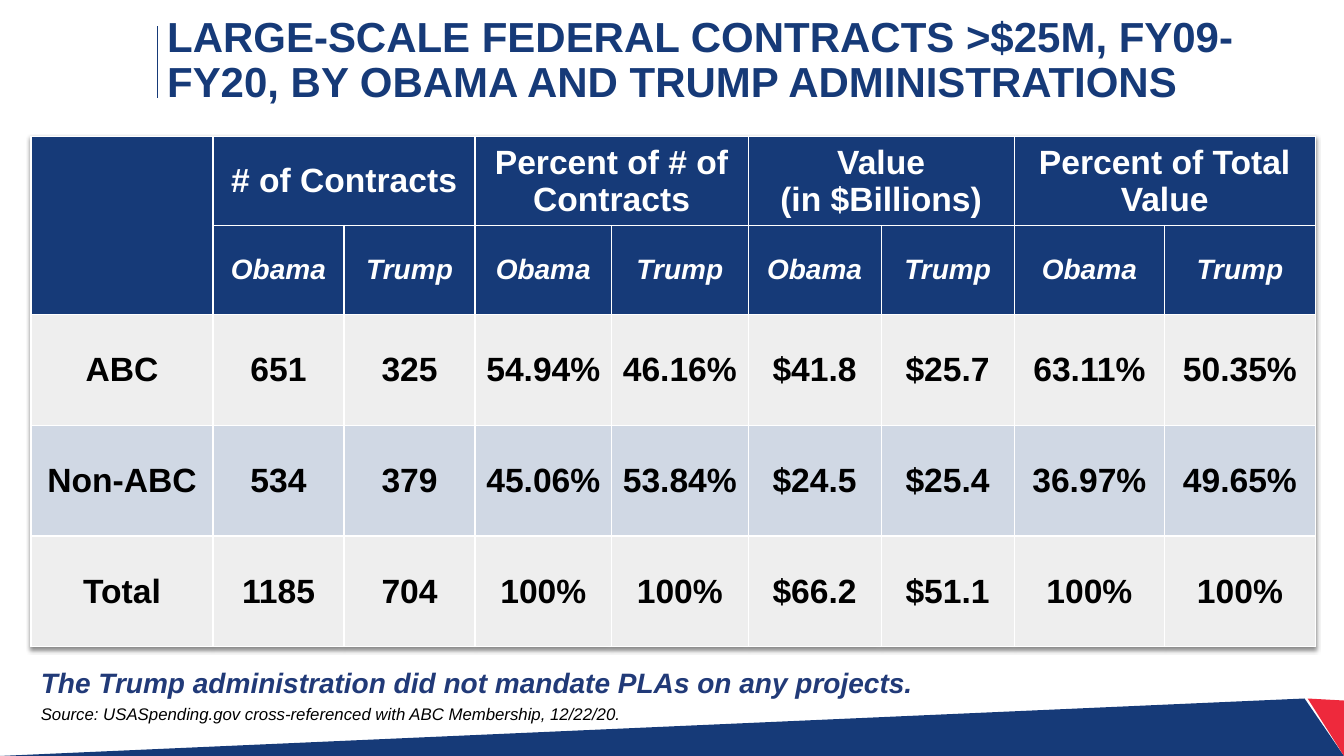
"""Build a slide comparing large-scale federal contracts under two administrations."""
from dataclasses import dataclass
from lxml.etree import SubElement
from pptx import Presentation
from pptx.dml.color import RGBColor
from pptx.enum.shapes import MSO_CONNECTOR
from pptx.enum.text import MSO_ANCHOR, PP_ALIGN
from pptx.oxml import parse_xml
from pptx.oxml.ns import nsdecls, qn
from pptx.slide import Slide
from pptx.table import _Cell
from pptx.text.text import TextFrame
from pptx.util import Emu, Inches, Pt

COLORS = {
    "navy": "163A78", "note": "213A78", "red": "EE293C", "white": "FFFFFF",
    "black": "000000", "gray": "EEEEEE", "mist": "D0D8E4",
}
SLIDE_WIDTH, SLIDE_HEIGHT = Inches(13.33), Inches(7.5)
COLUMN_SHARES = [13.55] + [9.75] * 2 + [10.16] * 2 + [9.9] * 2 + [11.2] * 2
ROW_SHARES = [11.8] * 2 + [14.63] * 3
MEASURES = ["# of Contracts", "Percent of # of Contracts",
            "Value\n(in $Billions)", "Percent of Total Value"]
ADMINISTRATIONS = ["Obama", "Trump"]
RESULTS = [
    ["ABC", "651", "325", "54.94%", "46.16%", "$41.8", "$25.7", "63.11%", "50.35%"],
    ["Non-ABC", "534", "379", "45.06%", "53.84%", "$24.5", "$25.4", "36.97%", "49.65%"],
    ["Total", "1185", "704", "100%", "100%", "$66.2", "$51.1", "100%", "100%"],
]


@dataclass(frozen=True)
class Style:
    """Size and look of a text."""
    size: int
    color: str
    bold: bool = True
    italic: bool = False


@dataclass(frozen=True)
class Caption:
    """A free text, placed in percent of the slide."""
    text: str
    left: float
    top: float
    width: float
    height: float
    style: Style
    anchor: MSO_ANCHOR = MSO_ANCHOR.TOP
    spacing: float = 1.0


@dataclass(frozen=True)
class Wedge:
    """A filled outline with corners in percent of the slide."""
    corners: tuple[tuple[float, float], ...]
    color: str


WEDGES = [
    Wedge(((0, 100), (97.07, 92.4), (100, 100)), "navy"),
    Wedge(((97.3, 92.4), (100, 92.67), (100, 100)), "red"),
]
TITLE = Caption(
    "LARGE-SCALE FEDERAL CONTRACTS >$25M, FY09-FY20, BY OBAMA AND TRUMP ADMINISTRATIONS",
    11.7, 3.6, 87.25, 9.07, Style(30, "navy"), MSO_ANCHOR.MIDDLE, 0.9)
FOOTNOTES = [
    Caption("Source: USASpending.gov cross-referenced with ABC Membership, 12/22/20.",
            2.3, 92.4, 57.5, 4, Style(12, "black", bold=False, italic=True)),
    Caption("The Trump administration did not mandate PLAs on any projects.",
            2.3, 87.33, 93.3, 5.87, Style(20, "note", italic=True)),
]
MEASURE_STYLE = Style(24, "white")
ADMINISTRATION_STYLE = Style(20, "white", italic=True)
RESULT_STYLE = Style(24, "black")


def across(percent: float) -> Emu:
    """Turn a share of the slide's width into a length."""
    return Emu(round(SLIDE_WIDTH * percent / 100))


def down(percent: float) -> Emu:
    """Turn a share of the slide's height into a length."""
    return Emu(round(SLIDE_HEIGHT * percent / 100))


def rgb(color: str) -> RGBColor:
    """Look up a named color."""
    return RGBColor.from_string(COLORS[color])


def write(frame: TextFrame, text: str, style: Style,
          align: PP_ALIGN = PP_ALIGN.LEFT, spacing: float = 1.0) -> None:
    """Fill a frame with text in one style."""
    frame.text = text
    for paragraph in frame.paragraphs:
        paragraph.alignment = align
        paragraph.line_spacing = spacing
        for run in paragraph.runs:
            run.font.name = "Arial"
            run.font.size = Pt(style.size)
            run.font.bold = style.bold
            run.font.italic = style.italic
            run.font.color.rgb = rgb(style.color)


def add_caption(slide: Slide, caption: Caption) -> None:
    """Add a free text."""
    frame = slide.shapes.add_textbox(
        across(caption.left), down(caption.top),
        across(caption.width), down(caption.height)).text_frame
    frame.word_wrap = True
    frame.vertical_anchor = caption.anchor
    write(frame, caption.text, caption.style, spacing=caption.spacing)


def add_wedge(slide: Slide, wedge: Wedge) -> None:
    """Add a footer wedge."""
    start, *others = [(across(x), down(y)) for x, y in wedge.corners]
    builder = slide.shapes.build_freeform(*start)
    builder.add_line_segments(others, close=True)
    outline = builder.convert_to_shape()
    outline.shadow.inherit = False
    outline.fill.solid()
    outline.fill.fore_color.rgb = rgb(wedge.color)
    outline.line.fill.background()


def add_title_rule(slide: Slide) -> None:
    """Add the thin rule left of the title."""
    rule = slide.shapes.add_connector(
        MSO_CONNECTOR.STRAIGHT, across(11.7), down(3.47), across(11.7), down(12.93))
    rule.line.color.rgb = rgb("navy")
    rule.line.width = Pt(0.5)
    SubElement(rule._element.spPr, qn("a:effectLst"))


def fill_cell(cell: _Cell, color: str, text: str, style: Style) -> None:
    """Write, color and border one cell."""
    write(cell.text_frame, text, style, PP_ALIGN.CENTER)
    cell.vertical_anchor = MSO_ANCHOR.MIDDLE
    cell.margin_left = cell.margin_right = across(0.53)
    cell.margin_top = cell.margin_bottom = down(0.53)
    properties = cell._tc.get_or_add_tcPr()
    for side in ("lnL", "lnR", "lnT", "lnB"):
        border = SubElement(properties, qn(f"a:{side}"), w=str(Pt(1)))
        SubElement(SubElement(border, qn("a:solidFill")), qn("a:srgbClr"),
                   val=COLORS["white"])
    cell.fill.solid()
    cell.fill.fore_color.rgb = rgb(color)


def add_contracts(slide: Slide) -> None:
    """Add the table of contracts by administration."""
    contracts = slide.shapes.add_table(
        len(ROW_SHARES), len(COLUMN_SHARES), across(2.3), down(18.05),
        across(sum(COLUMN_SHARES)), down(sum(ROW_SHARES))).table
    contracts.first_row = contracts.horz_banding = False
    contracts._tbl.tblPr.insert(0, parse_xml(
        f'<a:effectLst {nsdecls("a")}><a:outerShdw blurRad="38100" dist="19050" '
        'dir="5400000" algn="t" rotWithShape="0"><a:srgbClr val="000000">'
        '<a:alpha val="45000"/></a:srgbClr></a:outerShdw></a:effectLst>'))
    for column, share in zip(contracts.columns, COLUMN_SHARES):
        column.width = across(share)
    for row, share in zip(contracts.rows, ROW_SHARES):
        row.height = down(share)

    measures = [""] + [text for measure in MEASURES for text in (measure, "")]
    administrations = [""] + ADMINISTRATIONS * len(MEASURES)
    bands = [
        (measures, "navy", MEASURE_STYLE),
        (administrations, "navy", ADMINISTRATION_STYLE),
        *((result, color, RESULT_STYLE)
          for result, color in zip(RESULTS, ("gray", "mist", "gray"))),
    ]
    for row, (texts, color, style) in enumerate(bands):
        for column, text in enumerate(texts):
            fill_cell(contracts.cell(row, column), color, text, style)
    contracts.cell(0, 0).merge(contracts.cell(1, 0))
    for column in range(1, len(COLUMN_SHARES), len(ADMINISTRATIONS)):
        contracts.cell(0, column).merge(contracts.cell(0, column + 1))


def main() -> None:
    """Build and save the slide."""
    presentation = Presentation()
    presentation.slide_width, presentation.slide_height = SLIDE_WIDTH, SLIDE_HEIGHT
    slide = presentation.slides.add_slide(presentation.slide_layouts[6])
    add_title_rule(slide)
    for wedge in WEDGES:
        add_wedge(slide, wedge)
    add_caption(slide, TITLE)
    add_contracts(slide)
    for footnote in FOOTNOTES:
        add_caption(slide, footnote)
    presentation.save("out.pptx")


if __name__ == "__main__":
    main()
